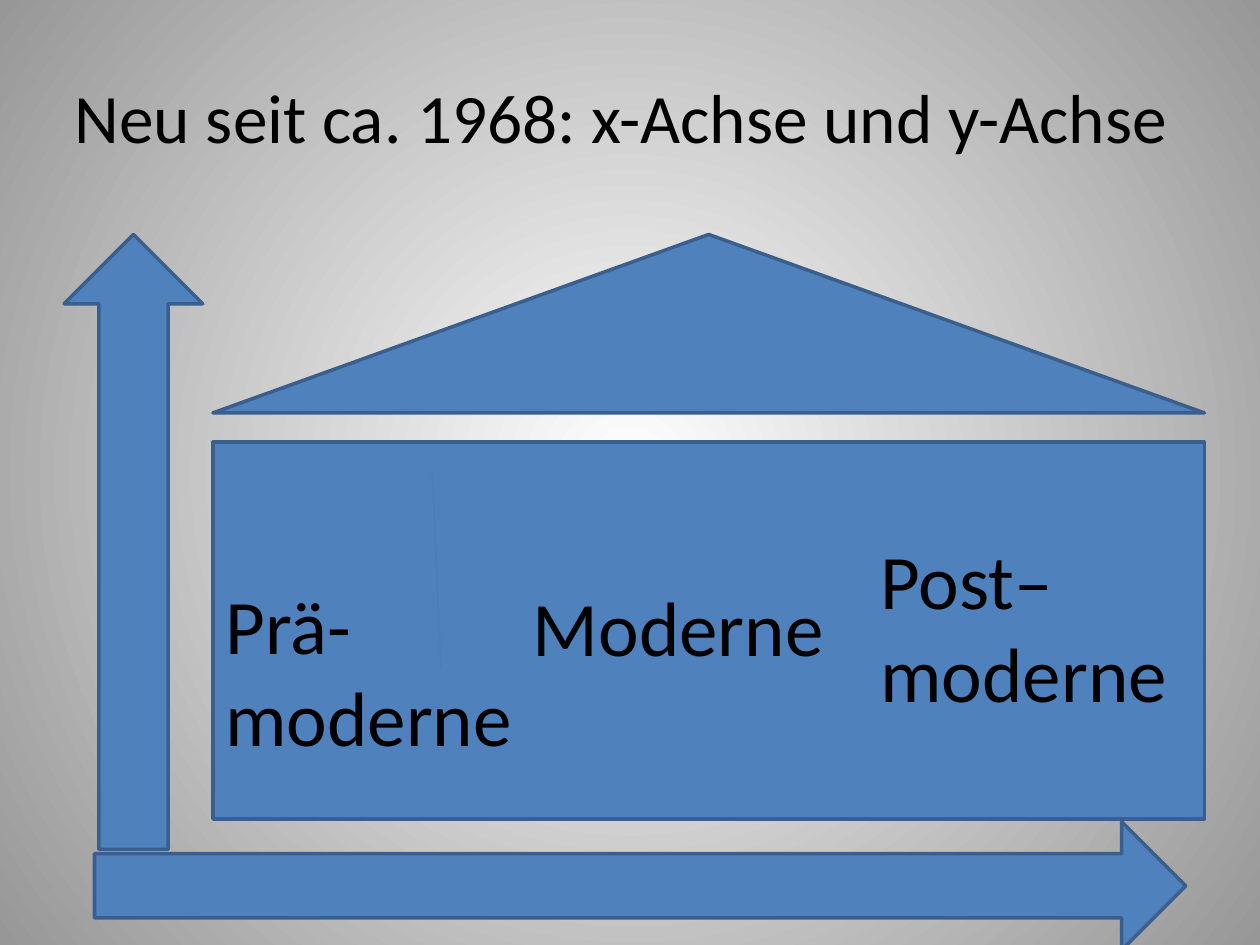
from collections import namedtuple

from lxml import etree
from pptx import Presentation
from pptx.dml.color import RGBColor
from pptx.enum.shapes import MSO_CONNECTOR, MSO_SHAPE
from pptx.enum.text import MSO_ANCHOR, MSO_AUTO_SIZE, PP_ALIGN
from pptx.oxml.ns import qn
from pptx.util import Pt

RECTANGLE = MSO_SHAPE.RECTANGLE
TRIANGLE = MSO_SHAPE.ISOSCELES_TRIANGLE
UP_ARROW = MSO_SHAPE.UP_ARROW
RIGHT_ARROW = MSO_SHAPE.RIGHT_ARROW
STRAIGHT = MSO_CONNECTOR.STRAIGHT
MIDDLE = MSO_ANCHOR.MIDDLE
TOP = MSO_ANCHOR.TOP
LEFT = PP_ALIGN.LEFT
CENTER = PP_ALIGN.CENTER
NO_FIT = MSO_AUTO_SIZE.NONE
GROW = MSO_AUTO_SIZE.SHAPE_TO_FIT_TEXT

FONT = "Calibri"
BLACK, WHITE, GRAY = "000000", "FFFFFF", "979797"
BLUE, DARK_BLUE, DIVIDER_BLUE = "4F81BD", "3A5F8C", "4B7EBC"

Box = namedtuple("Box", "left top width height")


def color(value):
    return RGBColor.from_string(value)


def points(*values):
    return [Pt(value) for value in values]


def write_text(frame, text, size=44, align=LEFT, anchor=TOP, fit=GROW):
    frame.word_wrap = True
    frame.auto_size = fit
    frame.vertical_anchor = anchor
    for index, line in enumerate(text.split("\n")):
        para = frame.paragraphs[0] if index == 0 else frame.add_paragraph()
        para.alignment = align
        span = para.add_run()
        span.text = line
        span.font.name = FONT
        span.font.size = Pt(size)
        span.font.color.rgb = color(BLACK)


def add_block(page, kind, left, top, width, height):
    block = page.shapes.add_shape(kind, *points(left, top, width, height))
    block.shadow.inherit = False
    block.fill.solid()
    block.fill.fore_color.rgb = color(BLUE)
    block.line.color.rgb = color(DARK_BLUE)
    block.line.width = Pt(2)


def paint_background(page):
    fill = page.background.fill
    fill.gradient()
    for stop, position, shade in zip(fill.gradient_stops, (0, 1), (WHITE, GRAY)):
        stop.position = position
        stop.color.rgb = color(shade)
    gradient = next(page.element.iter(qn("a:gradFill")))
    gradient.remove(gradient.find(qn("a:lin")))
    center = etree.SubElement(gradient, qn("a:path"), path="circle")
    etree.SubElement(center, qn("a:fillToRect"), l="50000", t="50000", r="50000", b="50000")


def place_title(page, box):
    title = page.shapes.title
    title.left, title.top, title.width, title.height = points(*box)
    write_text(title.text_frame, "Neu seit ca. 1968: x-Achse und y-Achse",
               size=39.6, align=CENTER, anchor=MIDDLE, fit=NO_FIT)


def draw_house(page, box):
    roof_height, wall_height = 102, 215.3
    add_block(page, RECTANGLE, box.left, box.top + box.height - wall_height, box.width, wall_height)
    add_block(page, TRIANGLE, box.left, box.top, box.width, roof_height)

    labels = [
        ("Prä-moderne", 0, 192.2, 187.2, 113.8),
        ("Moderne", 175.7, 193.6, 209.5, 60.5),
        ("Post–\nmoderne", 374.4, 167, 193, 113.8),
    ]
    for text, left, top, width, height in labels:
        label = page.shapes.add_textbox(*points(box.left + left, box.top + top, width, height))
        write_text(label.text_frame, text)

    divider = page.shapes.add_connector(STRAIGHT, *points(
        box.left + 125.3, box.top + 136, box.left + 130.3, box.top + 247.6))
    divider.line.color.rgb = color(DIVIDER_BLUE)
    divider.line.width = Pt(0.75)
    etree.SubElement(divider.element.spPr, qn("a:effectLst"))


def draw_axes(page, box):
    y_width, y_height = 79.2, 351.4
    x_start, x_height = 17.3, 73.4
    add_block(page, UP_ARROW, box.left, box.top, y_width, y_height)
    add_block(page, RIGHT_ARROW, box.left + x_start, box.top + box.height - x_height,
              box.width - x_start, x_height)


def main():
    deck = Presentation()
    deck.slide_width, deck.slide_height = points(720, 540)
    page = deck.slides.add_slide(deck.slide_layouts[5])
    paint_background(page)
    place_title(page, Box(31, 21, 648, 90))
    draw_house(page, Box(121.7, 134, 566.6, 334))
    draw_axes(page, Box(36.7, 134, 640.9, 408.9))
    deck.save("out.pptx")


if __name__ == "__main__":
    main()
